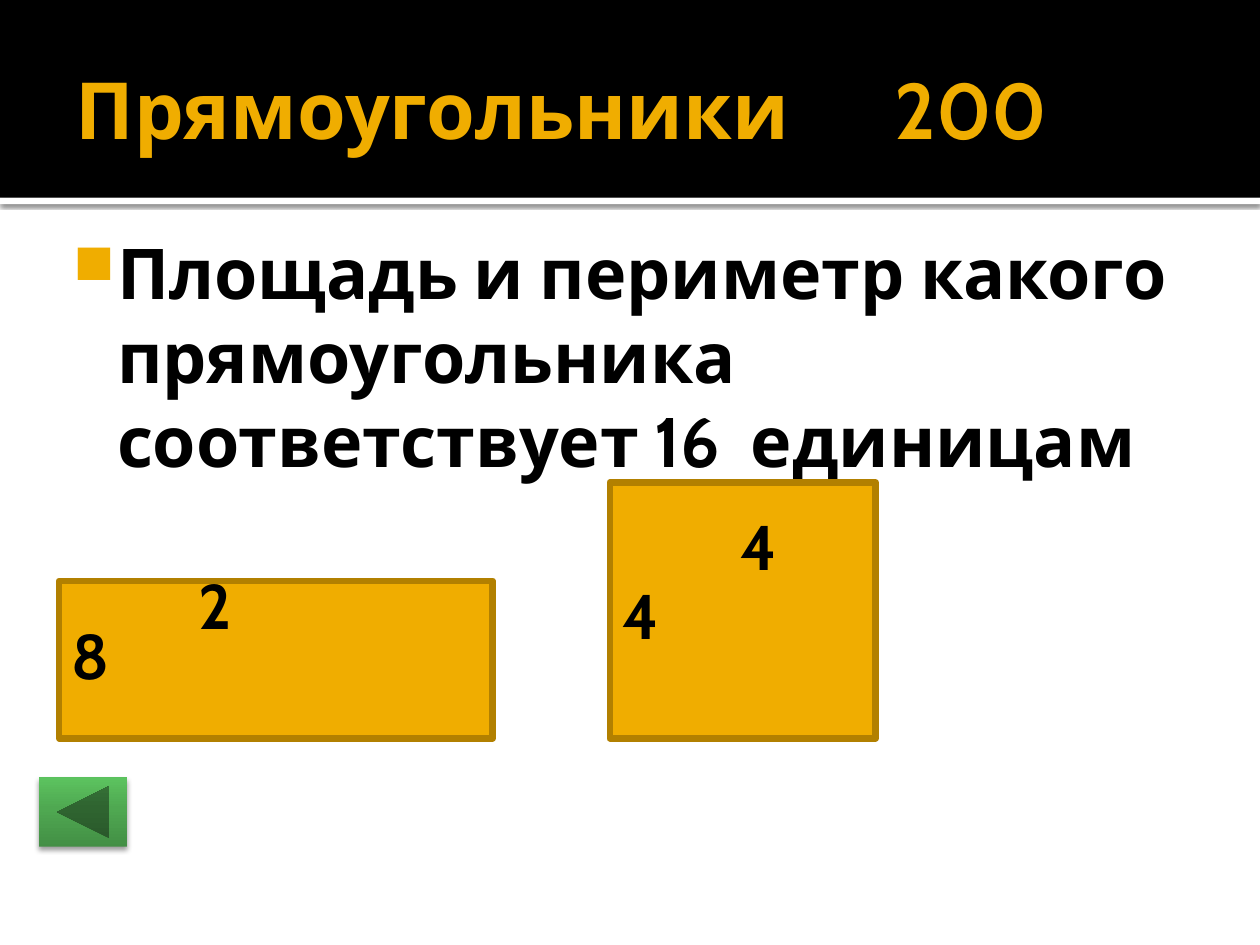
from copy import deepcopy
from dataclasses import dataclass

from lxml.etree import SubElement
from pptx import Presentation
from pptx.dml.color import RGBColor
from pptx.enum.shapes import MSO_SHAPE
from pptx.enum.text import MSO_ANCHOR, MSO_AUTO_SIZE, PP_ALIGN
from pptx.oxml.ns import qn
from pptx.util import Inches, Pt


@dataclass(frozen=True)
class Theme:
    font: str = "Cabin"
    title_size: float = 45
    body_size: float = 40
    label_size: float = 36
    outline_width: float = 3.78
    gold: str = "F0AD00"
    dark_gold: str = "B28000"
    black: str = "000000"
    white: str = "FFFFFF"
    button: tuple = ((0, "438F45"), (0.55, "4FA851"), (1, "5CC35F"))


THEME = Theme()


def color(value):
    return RGBColor.from_string(value)


def inches(box):
    return [Inches(length) for length in box]


def set_values(target, values):
    for name, value in values.items():
        setattr(target, name, value)


def write_text(frame, text, size, fill, **frame_format):
    """Write one bold paragraph and return it."""
    set_values(frame, frame_format)
    paragraph = frame.paragraphs[0]
    paragraph.alignment = PP_ALIGN.LEFT
    run = paragraph.add_run()
    run.text = text
    set_values(run.font, {"name": THEME.font, "size": Pt(size), "bold": True})
    run.font.color.rgb = color(fill)
    return paragraph


def add_block(slide, box, fill=None, line=None, kind=MSO_SHAPE.RECTANGLE):
    shape = slide.shapes.add_shape(kind, *inches(box))
    shape.shadow.inherit = False
    if fill:
        shape.fill.solid()
        shape.fill.fore_color.rgb = color(fill)
    if line:
        shape.line.color.rgb = color(line)
        shape.line.width = Pt(THEME.outline_width)
    else:
        shape.line.fill.background()
    return shape


def add_shadow(shape, opacity, blur, distance):
    """Cast a black shadow straight down."""
    effects = shape._element.spPr.find(qn("a:effectLst"))
    shadow = SubElement(effects, qn("a:outerShdw"), blurRad=str(Pt(blur)),
                        dist=str(Pt(distance)), dir="5400000", rotWithShape="0")
    shade = SubElement(shadow, qn("a:srgbClr"), val=THEME.black)
    SubElement(shade, qn("a:alpha"), val=str(opacity * 1000))


def add_header(slide, box, text):
    left, top, width, height = box
    rule = add_block(slide, (left, top + height, width, 0.05), THEME.white)
    add_shadow(rule, opacity=60, blur=2.5, distance=0.8)
    add_block(slide, box, THEME.black)

    # Title placeholder, brought in front of the band
    title = slide.shapes.title
    slide.shapes._spTree.append(title._element)
    title_box = inches((left + 0.5, top + 0.17, width - 1, height - 0.2))
    set_values(title, dict(zip(("left", "top", "width", "height"), title_box)))
    write_text(title.text_frame, text, THEME.title_size, THEME.gold,
               margin_left=Inches(0.1), margin_right=Inches(0.05),
               margin_top=Inches(0.05), margin_bottom=Inches(0.05),
               vertical_anchor=MSO_ANCHOR.MIDDLE, word_wrap=True,
               auto_size=MSO_AUTO_SIZE.NONE)


def add_question(slide, box, text):
    frame = slide.shapes.add_textbox(*inches(box)).text_frame
    paragraph = write_text(frame, text, THEME.body_size, THEME.black,
                           margin_left=Inches(0.06), margin_top=Inches(0.1),
                           word_wrap=True)
    # Square gold bullet with a hanging indent
    properties = paragraph._p.get_or_add_pPr()
    properties.set("marL", str(Inches(0.48)))
    properties.set("indent", str(Inches(-0.35)))
    bullet_color = SubElement(properties, qn("a:buClr"))
    SubElement(bullet_color, qn("a:srgbClr"), val=THEME.gold)
    SubElement(properties, qn("a:buSzPct"), val="80000")
    SubElement(properties, qn("a:buChar"), char="■")


def add_figure(slide, box, side_labels):
    """Draw a rectangle; each label is (text, x offset, y offset, width)."""
    left, top = box[:2]
    add_block(slide, box, THEME.gold, THEME.dark_gold)
    for text, across, down, width in side_labels:
        label_box = (left + across, top + down, width, 0.71)
        frame = slide.shapes.add_textbox(*inches(label_box)).text_frame
        write_text(frame, text, THEME.label_size, THEME.black,
                   word_wrap=False, auto_size=MSO_AUTO_SIZE.SHAPE_TO_FIT_TEXT)


def add_back_button(slide, box):
    button = add_block(slide, box, kind=MSO_SHAPE.ACTION_BUTTON_BACK_OR_PREVIOUS)
    fill = button.fill
    fill.gradient()
    fill.gradient_angle = 90
    # The default gradient has two stops; add the middle one
    stops = button._element.spPr.find(qn("a:gradFill")).find(qn("a:gsLst"))
    stops.insert(1, deepcopy(stops[0]))
    for stop, (position, value) in zip(fill.gradient_stops, THEME.button):
        stop.position = position
        stop.color.rgb = color(value)
    add_shadow(button, opacity=38, blur=3.1, distance=2)


def main():
    presentation = Presentation()
    set_values(presentation, {"slide_width": Inches(10), "slide_height": Inches(7.5)})
    slide = presentation.slides.add_slide(presentation.slide_layouts[5])

    add_header(slide, (0, 0, 10, 1.57), "Прямоугольники \t\t200")
    add_question(slide, (0.39, 1.72, 9, 1.5),
                 "Площадь и периметр какого прямоугольника "
                 "соответствует 16  единицам")
    add_figure(slide, (0.47, 4.61, 3.44, 1.25),
               [("2", 1.01, -0.16, 0.45), ("8", 0, 0.23, 0.48)])
    add_figure(slide, (4.84, 3.83, 2.11, 2.03),
               [("4", 0, 0.7, 0.48), ("4", 0.94, 0.15, 0.48)])
    add_back_button(slide, (0.31, 6.17, 0.7, 0.55))

    presentation.save("out.pptx")


if __name__ == "__main__":
    main()
